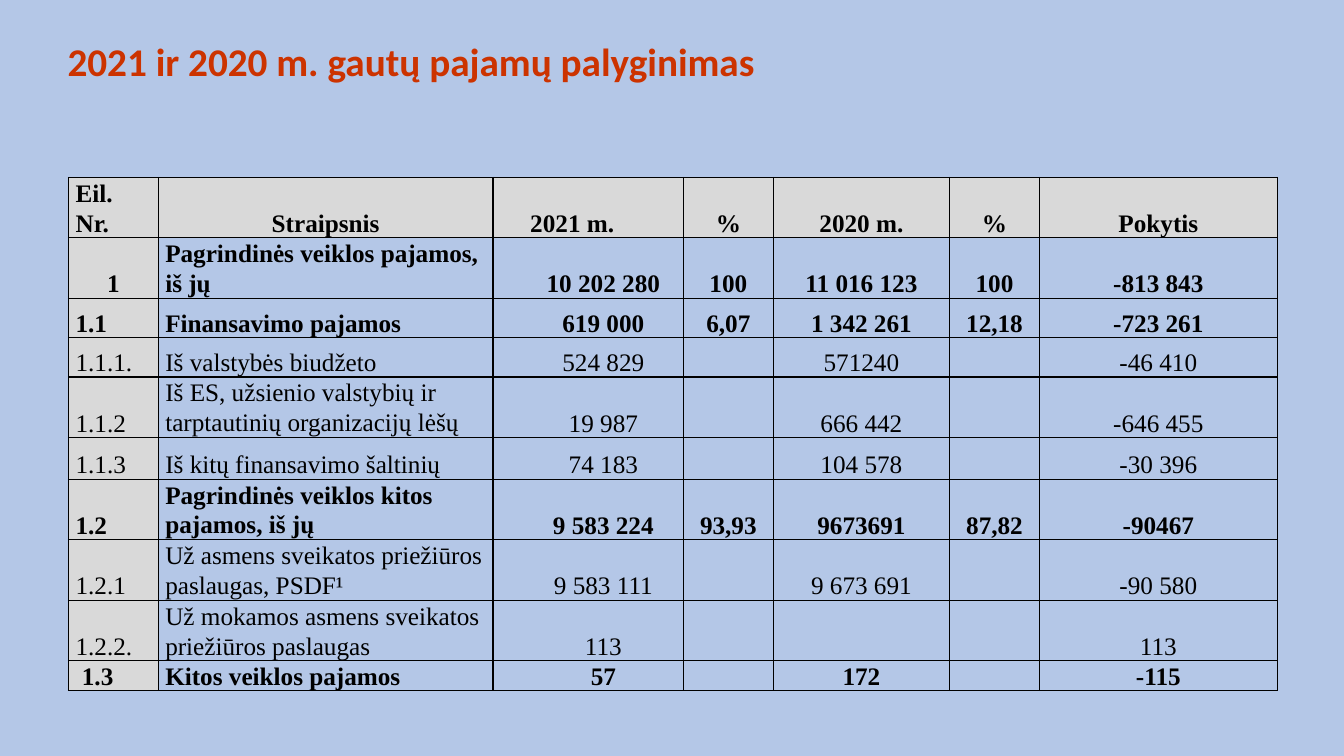
from lxml import etree
from pptx import Presentation
from pptx.dml.color import RGBColor
from pptx.enum.text import MSO_ANCHOR, PP_ALIGN
from pptx.oxml.ns import qn
from pptx.util import Inches, Pt

TITLE = "2021 ir 2020 m. gautų pajamų palyginimas"
HEADER = ["Eil. Nr.", "Straipsnis", "", "2021 m.", "%", "2020 m.", "%", "Pokytis"]
# number, item, 2021, %, 2020, %, change
ITEMS = [
    ("1", "Pagrindinės veiklos pajamos, iš jų", "10 202 280", "100", "11 016 123", "100", "-813 843"),
    ("1.1", "Finansavimo pajamos", "619 000", "6,07", "1 342 261", "12,18", "-723 261"),
    ("1.1.1.", "Iš valstybės biudžeto", "524 829", "", "571240", "", "-46 410"),
    ("1.1.2", "Iš ES, užsienio valstybių ir tarptautinių organizacijų lėšų",
     "19 987", "", "666 442", "", "-646 455"),
    ("1.1.3", "Iš kitų finansavimo šaltinių", "74 183", "", "104 578", "", "-30 396"),
    ("1.2", "Pagrindinės veiklos kitos pajamos, iš jų", "9 583 224", "93,93", "9673691", "87,82", "-90467"),
    ("1.2.1", "Už asmens sveikatos priežiūros paslaugas, PSDF¹", "9 583 111", "", "9 673 691", "", "-90 580"),
    ("1.2.2.", "Už mokamos asmens sveikatos priežiūros paslaugas", "113", "", "", "", "113"),
    ("\u00a01.3", "Kitos veiklos pajamos", "57", "", "172", "", "-115"),
]
COL_WIDTHS = [0.89, 3.32, 0.3, 1.59, 0.89, 1.75, 0.89, 2.36]
ROW_HEIGHTS = [0.6, 0.6, 0.39, 0.39, 0.6, 0.39, 0.6, 0.6, 0.6, 0.29]
NUMBER_SPACING = [1.5, 1.5, 1.07, 1.07, 2, 1.5, 1.5, 2, 2, 1.07]
BOLD_ROWS = {0, 1, 2, 6, 9}
MIDDLE_NAMES = {1, 4, 6}
SPACER, YEAR = 2, 3  # these neighbours have no line between them


def rgb(hex_code):
    return RGBColor.from_string(hex_code)


def style_run(r, font, size, color, bold):
    r.font.name, r.font.size, r.font.bold = font, Pt(size), bold
    r.font.color.rgb = rgb(color)


def add_borders(cell, hidden):
    tc_pr = cell._tc.get_or_add_tcPr()
    for side in "LRTB":
        ln = etree.SubElement(tc_pr, qn(f"a:ln{side}"), w=str(Pt(1)))
        if side == hidden:
            etree.SubElement(ln, qn("a:noFill"))
        else:
            fill = etree.SubElement(ln, qn("a:solidFill"))
            etree.SubElement(fill, qn("a:srgbClr"), val="000000")


def fill_cell(cell, row, col, value):
    add_borders(cell, {SPACER: "R", YEAR: "L"}.get(col))
    if row == 0 or col == 0:
        cell.fill.solid()
        cell.fill.fore_color.rgb = rgb("D9D9D9")
    else:
        cell.fill.background()
    cell.margin_left = cell.margin_right = Inches(0.07)
    cell.margin_top = cell.margin_bottom = 0
    middle = col == 1 and row in MIDDLE_NAMES
    cell.vertical_anchor = MSO_ANCHOR.MIDDLE if middle else MSO_ANCHOR.BOTTOM

    p = cell.text_frame.paragraphs[0]
    if row == 0:
        centred = col not in (0, YEAR)
    else:
        centred = col > 1 or (row, col) == (1, 0)
    p.alignment = PP_ALIGN.CENTER if centred else PP_ALIGN.LEFT
    label = col == 0 or (col == 1 and row > 0)
    p.line_spacing = 1.07 if label or not value else NUMBER_SPACING[row]
    p.space_after = Pt(8)
    r = p.add_run()
    r.text = value
    style_run(r, "Times New Roman", 18, "000000", row in BOLD_ROWS)


prs = Presentation()
prs.slide_width, prs.slide_height = Inches(13.33), Inches(7.5)
slide = prs.slides.add_slide(prs.slide_layouts[5])
slide.background.fill.solid()
slide.background.fill.fore_color.rgb = rgb("B4C7E7")

title = slide.shapes.title
title.left, title.top = Inches(0.57), Inches(0.1)
title.width, title.height = Inches(11.5), Inches(1.07)
tf = title.text_frame
tf.text = TITLE
tf.vertical_anchor = MSO_ANCHOR.MIDDLE
p = tf.paragraphs[0]
p.alignment, p.line_spacing = PP_ALIGN.LEFT, 0.9
style_run(p.runs[0], "Calibri", 28, "CC3300", True)

rows = [HEADER] + [[*item[:2], "", *item[2:]] for item in ITEMS]
table = slide.shapes.add_table(
    len(rows), len(COL_WIDTHS), Inches(0.68), Inches(1.76),
    Inches(sum(COL_WIDTHS)), Inches(sum(ROW_HEIGHTS))).table
table.first_row = table.horz_banding = False
for column, width in zip(table.columns, COL_WIDTHS):
    column.width = Inches(width)
for i, values in enumerate(rows):
    table.rows[i].height = Inches(ROW_HEIGHTS[i])
    for j, value in enumerate(values):
        fill_cell(table.cell(i, j), i, j, value)

prs.save("out.pptx")
